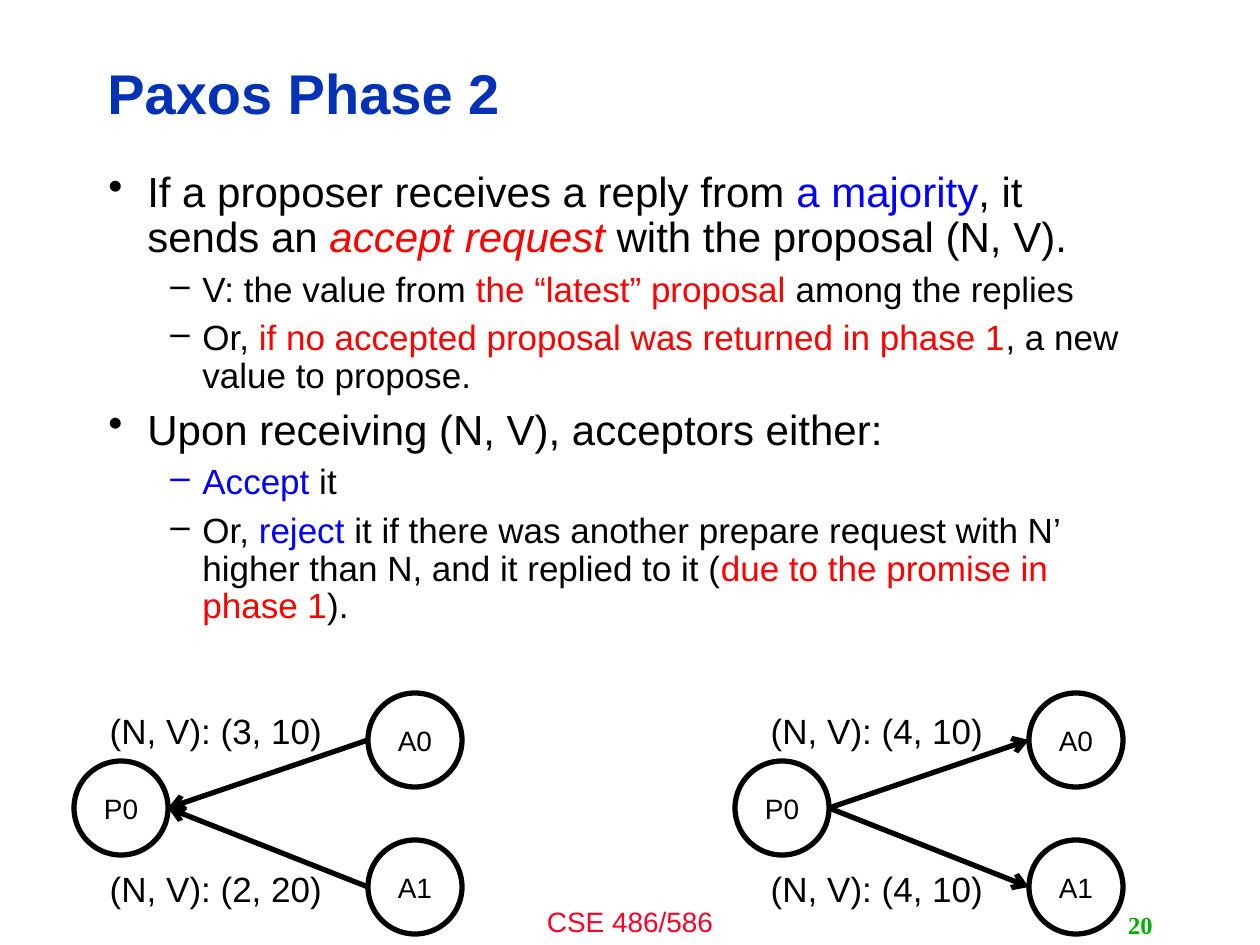
from dataclasses import dataclass

import pptx
import pptx.dml.color
import pptx.enum.shapes
import pptx.enum.text
import pptx.oxml
import pptx.oxml.ns
import pptx.util
from lxml import etree

ALIGN = pptx.enum.text.PP_ALIGN
ANCHOR = pptx.enum.text.MSO_ANCHOR


@dataclass(frozen=True)
class Theme:
    sans: str = "Arial"
    serif: str = "Times New Roman"
    ink: str = "000000"
    paper: str = "FFFFFF"
    title: str = "0332B7"
    blue: str = "0000FF"
    red: str = "FF0000"
    footer: str = "FC0128"
    number: str = "00AE00"
    title_size: int = 32
    point_size: int = 24
    detail_size: int = 20
    small_size: int = 16
    number_size: int = 14
    stroke: int = 3


THEME = Theme()
PX_PER_INCH = 126
NODE = 94  # diameter of a process circle

# Each point: level, then runs of text or (text, colour[, italic])
POINTS = [
    (0, ["If a proposer receives a reply from ", ("a majority", THEME.blue),
         ", it sends an ", ("accept request", THEME.red, True),
         " with the proposal (N, V)."]),
    (1, ["V: the value from ", ("the “latest” proposal ", THEME.red),
         "among the replies"]),
    (1, ["Or, ", ("if no accepted proposal was returned in phase 1", THEME.red),
         ", a new value to propose."]),
    (0, ["Upon receiving (N, V), acceptors either:"]),
    (1, [("Accept", THEME.blue), " it"]),
    (1, ["Or, ", ("reject", THEME.blue),
         " it if there was another prepare request with N’ higher than N, "
         "and it replied to it (",
         ("due to the promise in phase 1", THEME.red), ")."]),
]
# Level: bullet, text indent, hanging indent, type size
LEVELS = [("•", 39, 39, THEME.point_size), ("–", 94, 32, THEME.detail_size)]


def px(length):
    return pptx.util.Emu(round(length * 914400 / PX_PER_INCH))


def rgb(colour):
    return pptx.dml.color.RGBColor.from_string(colour)


def style(font, size, colour=THEME.ink, name=THEME.sans, bold=False):
    font.size = pptx.util.Pt(size)
    font.name = name
    font.bold = bold
    font.color.rgb = rgb(colour)


def add_frame(shapes, box, anchor=ANCHOR.TOP):
    frame = shapes.add_textbox(*map(px, box)).text_frame
    frame.word_wrap = True
    frame.vertical_anchor = anchor
    return frame


def add_label(shapes, box, text, size, align=ALIGN.CENTER, anchor=ANCHOR.TOP, **look):
    line = add_frame(shapes, box, anchor).paragraphs[0]
    line.text = text
    line.alignment = align
    style(line.font, size, **look)
    return line


def add_points(shapes, box):
    frame = add_frame(shapes, box)
    for index, (level, runs) in enumerate(POINTS):
        bullet, indent, hanging, size = LEVELS[level]
        point = frame.add_paragraph() if index else frame.paragraphs[0]
        point.level = level
        point.line_spacing = 0.9
        if index:
            point.space_before = pptx.util.Pt(size * 0.3)
        style(point.font, size)
        properties = point._p.get_or_add_pPr()
        properties.set("marL", str(px(indent)))
        properties.set("indent", str(-px(hanging)))
        mark = pptx.oxml.parse_xml(
            f'<a:buChar {pptx.oxml.ns.nsdecls("a")} char="{bullet}"/>')
        properties.find(pptx.oxml.ns.qn("a:defRPr")).addprevious(mark)
        for part in runs:
            text, colour, *italic = (part, THEME.ink) if isinstance(part, str) else part
            run = point.add_run()
            run.text = text
            style(run.font, size, colour)
            run.font.italic = bool(italic)


def add_process(shapes, left, top, name):
    circle = shapes.add_shape(pptx.enum.shapes.MSO_SHAPE.OVAL,
                              px(left), px(top), px(NODE), px(NODE))
    circle.shadow.inherit = False
    circle.fill.solid()
    circle.fill.fore_color.rgb = rgb(THEME.paper)
    circle.line.color.rgb = rgb(THEME.ink)
    circle.line.width = pptx.util.Pt(THEME.stroke)
    frame = circle.text_frame
    frame.word_wrap = False
    frame.vertical_anchor = ANCHOR.MIDDLE
    caption = frame.paragraphs[0]
    caption.text = name
    caption.alignment = ALIGN.CENTER
    style(caption.font, THEME.small_size)


def add_message(shapes, sender, receiver):
    arrow = shapes.add_connector(pptx.enum.shapes.MSO_CONNECTOR.STRAIGHT,
                                 *map(px, (*sender, *receiver)))
    arrow.line.color.rgb = rgb(THEME.ink)
    arrow.line.width = pptx.util.Pt(THEME.stroke)
    etree.SubElement(arrow.line._get_or_add_ln(),
                     pptx.oxml.ns.qn("a:tailEnd"), type="arrow")
    etree.SubElement(arrow._element.spPr, pptx.oxml.ns.qn("a:effectLst"))


def add_exchange(slide, left, proposals, to_proposer):
    """One proposer and its acceptors, with a message on each link."""
    shapes = slide.shapes.add_group_shape().shapes
    proposer_top, acceptor_left = 761, left + 294
    proposer_side = (left + NODE, proposer_top + NODE // 2)
    add_process(shapes, left, proposer_top, "P0")
    rows = zip((693, 840), (703, 861), proposals)
    for index, (top, label_top, proposal) in enumerate(rows):
        add_process(shapes, acceptor_left, top, f"A{index}")
        ends = [proposer_side, (acceptor_left, top + NODE // 2)]
        add_message(shapes, *(reversed(ends) if to_proposer else ends))
        add_label(shapes, (left + 21, label_top, 242, 55),
                  f"(N, V): {proposal}", THEME.detail_size)


def main():
    deck = pptx.Presentation()
    deck.slide_width, deck.slide_height = px(1260), px(945)
    slide = deck.slides.add_slide(deck.slide_layouts[6])

    # Footer, title and page number
    add_label(slide.shapes, (420, 898, 420, 47), "CSE 486/586",
              THEME.small_size, colour=THEME.footer)
    title = add_label(slide.shapes, (95, 45, 1005, 102), "Paxos Phase 2",
                      THEME.title_size, ALIGN.LEFT, ANCHOR.MIDDLE,
                      colour=THEME.title, bold=True)
    title.line_spacing = 0.9
    add_label(slide.shapes, (903, 905, 262, 40), "20", THEME.number_size,
              ALIGN.RIGHT, ANCHOR.MIDDLE, colour=THEME.number,
              name=THEME.serif, bold=True)

    # Explanation
    add_points(slide.shapes, (96, 165, 1058, 679))

    # Replies to the proposer, then its accept requests
    add_exchange(slide, 74, ("(3, 10)", "(2, 20)"), to_proposer=True)
    add_exchange(slide, 735, ("(4, 10)", "(4, 10)"), to_proposer=False)

    deck.save("out.pptx")


if __name__ == "__main__":
    main()
